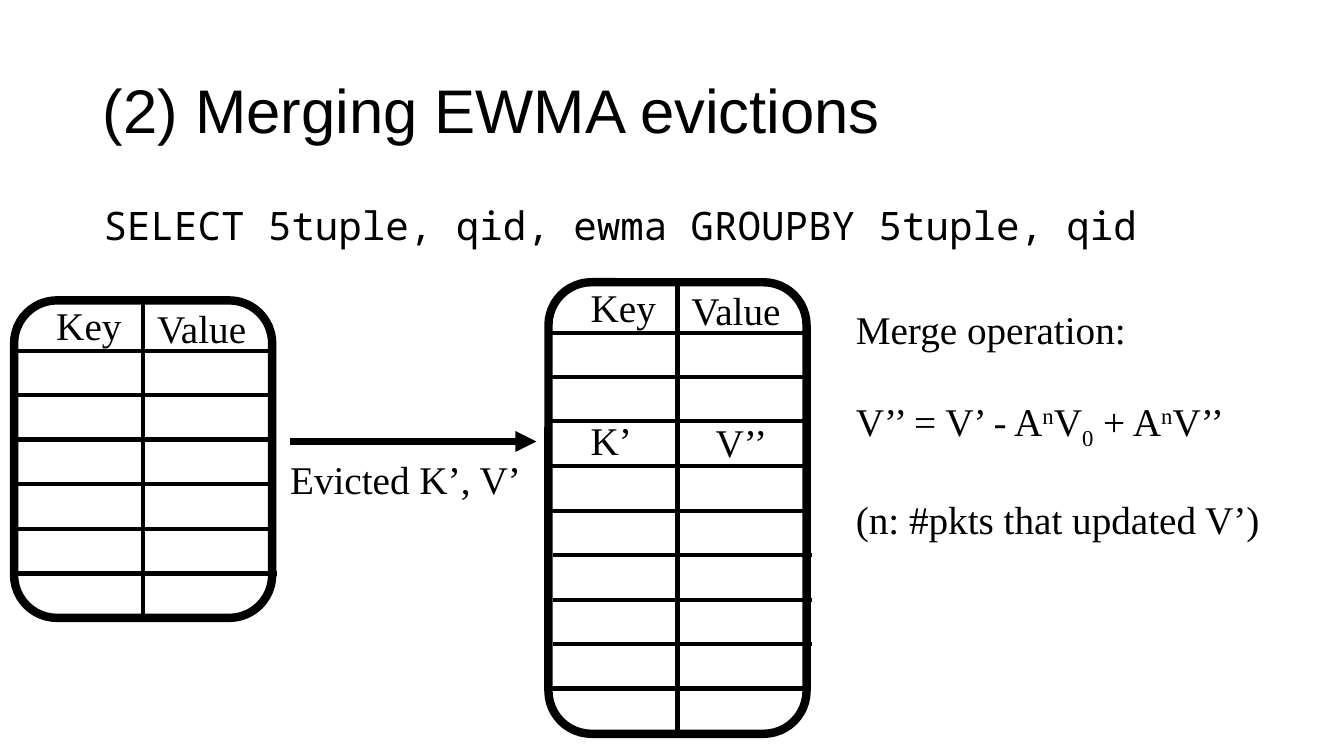
from lxml import etree
from pptx import Presentation, util as u
from pptx.dml.color import RGBColor
from pptx.enum import shapes, text
from pptx.oxml.ns import qn

BLACK = RGBColor(0, 0, 0)
EMU_PER_PX = 9144
SERIF = "Times New Roman"
MONO = "Noto Sans Mono"
SUPERSCRIPT, SUBSCRIPT = 30000, -25000


def px(length):
    return u.Emu(length * EMU_PER_PX)


class Deck:
    def __init__(self):
        self.prs = Presentation()
        self.prs.slide_width, self.prs.slide_height = px(1333), px(750)
        self.slide = None

    def add_slide(self):
        self.slide = self.prs.slides.add_slide(self.prs.slide_layouts[5])

    def run(self, para, words, size=28, font=SERIF, baseline=0):
        run = para.add_run()
        run.text = words
        run.font.size, run.font.name = u.Pt(size), font
        run.font.color.rgb = BLACK
        if baseline:
            run.font._element.set("baseline", str(baseline))

    def title(self, words, left, top, width, height):
        heading = self.slide.shapes.title
        heading.left, heading.top = px(left), px(top)
        heading.width, heading.height = px(width), px(height)
        frame = heading.text_frame
        frame.word_wrap = True
        frame.auto_size = text.MSO_AUTO_SIZE.NONE
        frame.vertical_anchor = text.MSO_ANCHOR.MIDDLE
        para = frame.paragraphs[0]
        para.alignment = text.PP_ALIGN.LEFT
        para.line_spacing = 0.9
        self.run(para, words, 44, "Arial")

    def text(self, paragraphs, left, top, width, height=57, wrap=False,
             font=SERIF, line_spacing=None, gap=0):
        box = self.slide.shapes.add_textbox(px(left), px(top), px(width), px(height))
        frame = box.text_frame
        frame.word_wrap = wrap
        for i, runs in enumerate(paragraphs):
            para = frame.add_paragraph() if i else frame.paragraphs[0]
            para.alignment = text.PP_ALIGN.LEFT
            if line_spacing:
                para.line_spacing = line_spacing
            if i and gap:
                para.space_before = u.Pt(gap)
            for words, baseline in runs:
                self.run(para, words, font=font, baseline=baseline)

    def label(self, words, left, top, width, **style):
        self.text([[(words, 0)]], left, top, width, **style)

    def line(self, x1, y1, x2, y2, weight=3, arrow=False):
        rule = self.slide.shapes.add_connector(
            shapes.MSO_CONNECTOR.STRAIGHT, px(x1), px(y1), px(x2), px(y2))
        rule.line.color.rgb = BLACK
        rule.line.width = u.Pt(weight)
        if arrow:
            ln = rule.line._get_or_add_ln()
            etree.SubElement(ln, qn("a:tailEnd"), type="triangle")
        etree.SubElement(rule._element.spPr, qn("a:effectLst"))
        return rule

    def store(self, left, top, height, first_row, rows, shifted):
        width, row_pitch, shift = 256, 44.15, 5
        frame = self.slide.shapes.add_shape(
            shapes.MSO_SHAPE.ROUNDED_RECTANGLE, px(left), px(top), px(width), px(height))
        frame.shadow.inherit = False
        frame.fill.background()
        frame.line.color.rgb = BLACK
        frame.line.width = u.Pt(6)
        for row in range(rows):
            y = round(first_row + row * row_pitch)
            x = left - 1 + shift * (row in shifted)
            self.line(x, y, x + width + 1, y)
        middle = left + width // 2
        divider = self.line(middle, top, middle, top + height)
        divider.begin_connect(frame, 0)
        divider.end_connect(frame, 2)
        self.label("Key", left + 32, top - 4, 86)
        self.label("Value", left + 132, top - 1, 109)


def main():
    deck = Deck()
    deck.add_slide()
    deck.title("(2) Merging EWMA evictions", 92, 40, 1150, 145)
    deck.label("SELECT 5tuple, qid, ewma GROUPBY 5tuple, qid", 93, 200, 1064,
               height=107, wrap=True, font=MONO, line_spacing=0.9)

    deck.store(14, 298, 315, first_row=348, rows=6, shifted={5})
    deck.store(544, 280, 448, first_row=330, rows=9, shifted={5, 6, 7})
    deck.label("K’", 576, 408, 62)
    deck.label("V’’", 700, 410, 72)

    deck.line(288, 438, 532, 438, weight=5, arrow=True)
    deck.label("Evicted K’, V’", 278, 447, 256, wrap=True)

    merge_rule = [
        ("V’’ = V’ - A", 0), ("n", SUPERSCRIPT), ("V", 0), ("0", SUBSCRIPT),
        (" + A", 0), ("n", SUPERSCRIPT), ("V’’", 0),
    ]
    deck.text([[("Merge operation:", 0)], merge_rule,
               [("(n: #pkts that updated V’)", 0)]],
              839, 298, 494, height=293, wrap=True, gap=32)
    deck.prs.save("out.pptx")


if __name__ == "__main__":
    main()
